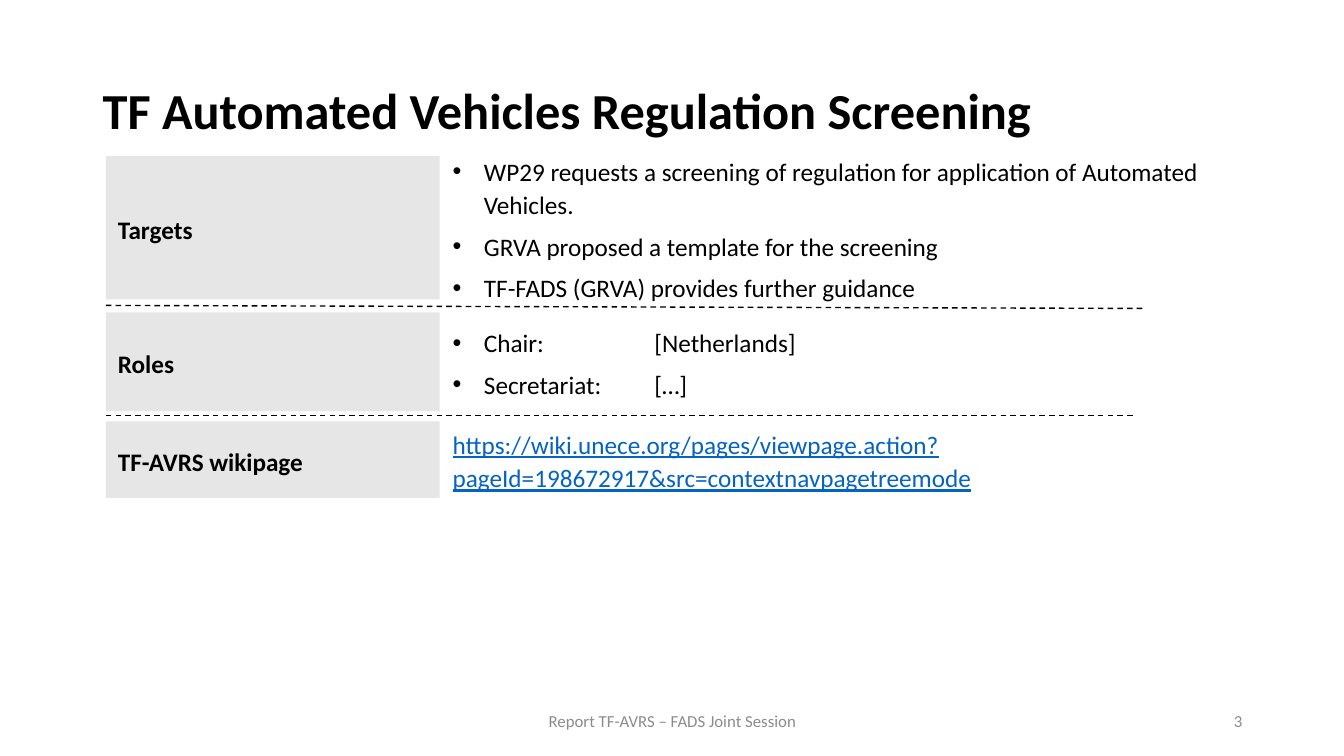
from lxml.etree import SubElement
from pptx import Presentation
from pptx.dml.color import RGBColor
from pptx.enum.dml import MSO_LINE
from pptx.enum.shapes import MSO_CONNECTOR, MSO_SHAPE
from pptx.enum.text import MSO_ANCHOR, PP_ALIGN
from pptx.oxml.ns import qn
from pptx.util import Inches, Pt

prs = Presentation()
prs.slide_width, prs.slide_height = Inches(13.33), Inches(7.5)
s = prs.slides.add_slide(prs.slide_layouts[6])


def rgb(code):
    return RGBColor.from_string(code)


def write(sp, lines, size=18, color="000000", bold=None, underline=None,
          align=PP_ALIGN.LEFT, spacing=1.1, bullets=False, margins=(0.1, 0.05)):
    tf = sp.text_frame
    tf.word_wrap = True
    tf.vertical_anchor = MSO_ANCHOR.MIDDLE
    tf.margin_left = tf.margin_right = Inches(margins[0])
    tf.margin_top = tf.margin_bottom = Inches(margins[1])
    for i, line in enumerate(lines):
        p = tf.add_paragraph() if i else tf.paragraphs[0]
        if bullets:
            pPr = p._p.get_or_add_pPr()
            pPr.set("marL", str(Inches(0.31)))
            pPr.set("indent", str(-Inches(0.31)))
            SubElement(pPr, qn("a:buFont"), typeface="Arial")
            SubElement(pPr, qn("a:buChar"), char="•")
            tabs = SubElement(pPr, qn("a:tabLst"))
            SubElement(tabs, qn("a:tab"), pos=str(Inches(2)), algn="l")
        p.alignment = align
        p.line_spacing = spacing
        p.space_before = Pt(6 if i else 0)
        r = p.add_run()
        r.text = line
        r.font.name, r.font.size = "Calibri", Pt(size)
        r.font.bold, r.font.underline = bold, underline
        r.font.color.rgb = rgb(color)


label_x, label_w, body_x = 1.05, 3.31, 4.49

sp = s.shapes.add_textbox(Inches(0.92), Inches(0.4), Inches(11.5), Inches(1.45))
write(sp, ["TF Automated Vehicles Regulation Screening"], size=36, bold=True, spacing=0.9)

for y1, x2, y2 in [(3.03, 11.35, 3.06), (4.12, 11.26, 4.12)]:
    line = s.shapes.add_connector(MSO_CONNECTOR.STRAIGHT, Inches(label_x), Inches(y1),
                                  Inches(x2), Inches(y2))
    line.line.color.rgb = rgb("000000")
    line.line.width = Pt(1)
    line.line.dash_style = MSO_LINE.DASH
    SubElement(line._element.spPr, qn("a:effectLst"))

rows = [
    ("Targets", 1.55, 1.42, 7.43, dict(bullets=True), [
        "WP29 requests a screening of regulation for application of Automated Vehicles.",
        "GRVA proposed a template for the screening",
        "TF-FADS (GRVA) provides further guidance"]),
    ("Roles", 3.1, 0.98, 6.78, dict(bullets=True), [
        "Chair:\t[Netherlands]",
        "Secretariat:\t[…]"]),
    ("TF-AVRS wikipage", 4.18, 0.76, 7.03, dict(color="0563C1", underline=True), [
        "https://wiki.unece.org/pages/viewpage.action?pageId=198672917&src=contextnavpagetreemode"]),
]
for label, y, h, body_w, style, lines in rows:
    sp = s.shapes.add_textbox(Inches(body_x), Inches(y), Inches(body_w), Inches(h))
    write(sp, lines, margins=(0, 0), **style)
    sp = s.shapes.add_shape(MSO_SHAPE.RECTANGLE, Inches(label_x), Inches(y),
                            Inches(label_w), Inches(h))
    sp.shadow.inherit = False
    sp.fill.solid()
    sp.fill.fore_color.rgb = rgb("E7E6E6")
    sp.line.fill.background()
    write(sp, [label], bold=True, margins=(0.12, 0.08))

for x, w, text, align in [(9.42, 3, "3", PP_ALIGN.RIGHT),
                          (4.42, 4.5, "Report TF-AVRS – FADS Joint Session", PP_ALIGN.CENTER)]:
    sp = s.shapes.add_textbox(Inches(x), Inches(6.95), Inches(w), Inches(0.4))
    write(sp, [text], size=12, color="8C8C8C", align=align, spacing=1)

prs.save("out.pptx")
